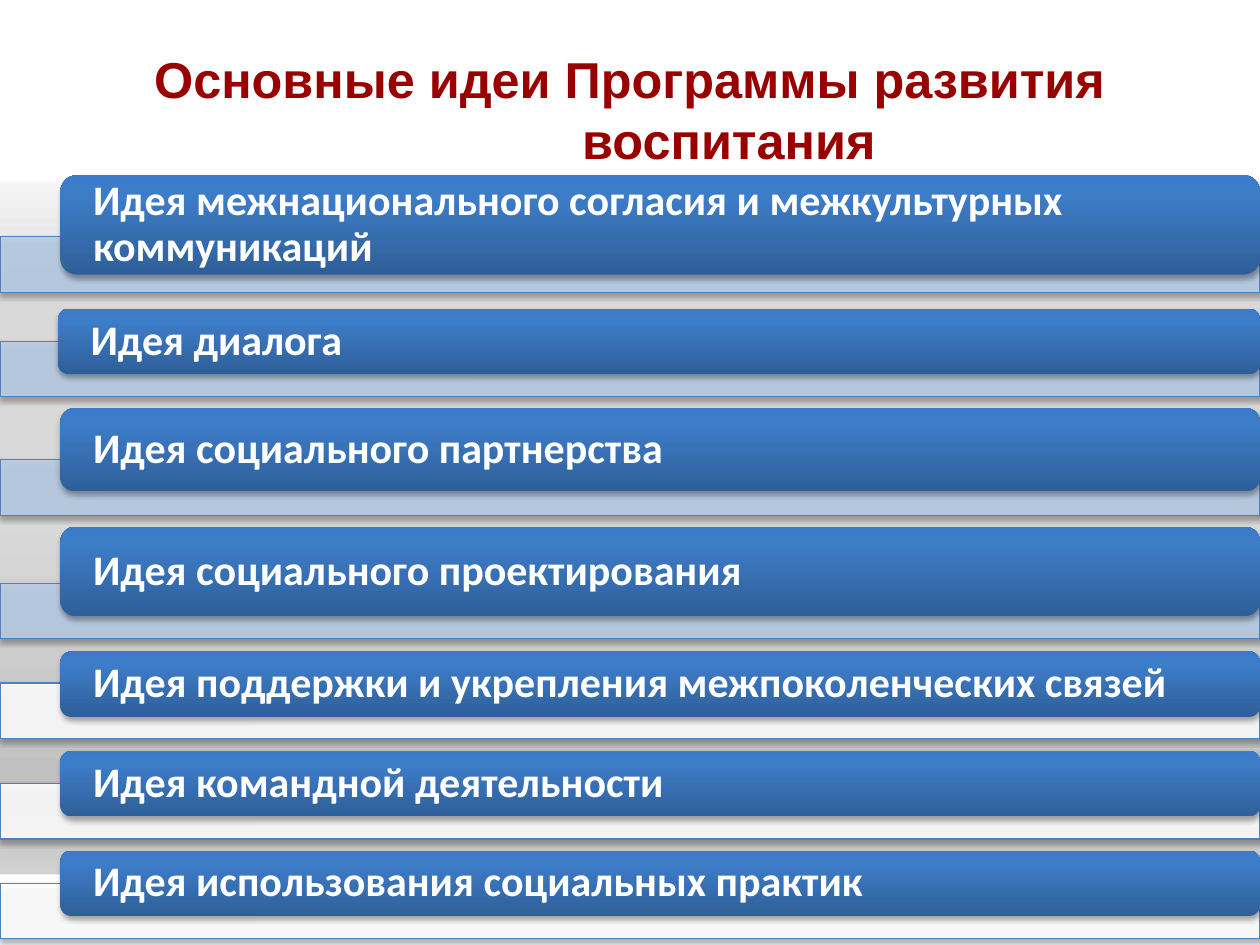
from lxml.etree import SubElement
from pptx import Presentation
from pptx.dml.color import RGBColor
from pptx.enum.shapes import MSO_SHAPE as Shape
from pptx.enum.text import MSO_ANCHOR as Anchor, PP_ALIGN as Align
from pptx.oxml.ns import qn
from pptx.util import Inches, Pt

WIDTH, HEIGHT = 10, 7.5
WHITE = RGBColor(0xFF, 0xFF, 0xFF)
DARK_RED = RGBColor(0x99, 0x00, 0x00)
PALE_BLUE = RGBColor(0xB9, 0xCD, 0xE5)
LINE_BLUE = RGBColor(0x4F, 0x81, 0xBD)
DEEP_BLUE = RGBColor(0x2F, 0x5F, 0x99)
MID_BLUE = RGBColor(0x3D, 0x7C, 0xC7)
BRIGHT_BLUE = RGBColor(0x3A, 0x7C, 0xCB)
LIGHT_GREY = RGBColor(0xD9, 0xD9, 0xD9)
MID_GREY = RGBColor(0xBF, 0xBF, 0xBF)
PALE_GREY = RGBColor(0xE6, 0xE6, 0xE6)

PAGE_STOPS = [(0, WHITE), (15, WHITE), (32, LIGHT_GREY),
              (54, LIGHT_GREY), (85, MID_GREY), (100, PALE_GREY)]
PILL_STOPS = [(0, DEEP_BLUE), (80, MID_BLUE), (100, BRIGHT_BLUE)]

PLATE_HEIGHT = 0.44
PILL_LEFT = 0.48
PILL_INSET = 0.26
CORNER_INSET = 0.05  # text inset of a rounded corner, as a share of height

# Idea, pill left, pill top, pill height, plate top, plate colour
IDEAS = [
    ("Идея межнационального согласия и межкультурных коммуникаций",
     PILL_LEFT, 1.39, 0.79, 1.88, PALE_BLUE),
    ("Идея диалога", 0.46, 2.45, 0.52, 2.71, PALE_BLUE),
    ("Идея социального партнерства", PILL_LEFT, 3.24, 0.66, 3.65, PALE_BLUE),
    ("Идея социального проектирования", PILL_LEFT, 4.18, 0.71, 4.63, PALE_BLUE),
    ("Идея поддержки и укрепления межпоколенческих связей",
     PILL_LEFT, 5.17, 0.52, 5.42, WHITE),
    ("Идея командной деятельности", PILL_LEFT, 5.96, 0.52, 6.22, WHITE),
    ("Идея использования социальных практик",
     PILL_LEFT, 6.75, 0.52, 7.01, WHITE),
]


def add_color(parent, color, alpha=None):
    node = SubElement(parent, qn("a:srgbClr"), val=str(color))
    if alpha is not None:
        SubElement(node, qn("a:alpha"), val=str(alpha * 1000))


def set_gradient(fill, owner, stops, angle):
    """Fill with any number of stops; the angle runs counter-clockwise."""
    fill.gradient()
    fill.gradient_angle = angle
    stop_list = next(owner.iter(qn("a:gsLst")))
    for old_stop in list(stop_list):
        stop_list.remove(old_stop)
    for position, color in stops:
        add_color(SubElement(stop_list, qn("a:gs"), pos=str(position * 1000)), color)


def add_box(page, kind, left, top, width, height):
    box = page.shapes.add_shape(
        kind, Inches(left), Inches(top), Inches(width), Inches(height))
    box.shadow.inherit = False
    box.line.fill.background()
    return box


def add_plain_box(page, left, top, width, height, color):
    box = add_box(page, Shape.RECTANGLE, left, top, width, height)
    box.fill.solid()
    box.fill.fore_color.rgb = color
    return box


def cast_shadow(box):
    effects = box.element.spPr.find(qn("a:effectLst"))
    shadow = SubElement(effects, qn("a:outerShdw"), blurRad=str(Pt(3.1)),
                        dist=str(Pt(1.8)), dir="5400000", rotWithShape="0")
    add_color(shadow, RGBColor(0, 0, 0), 35)


def write(box, text, font_name, size, color, align):
    frame = box.text_frame
    frame.word_wrap = True
    frame.vertical_anchor = Anchor.MIDDLE
    para = frame.paragraphs[0]
    para.text = text
    para.alignment = align
    font = para.font
    font.name, font.size, font.bold = font_name, Pt(size), True
    font.color.rgb = color
    return para


def add_title(page):
    box = add_plain_box(page, 0, 0.29, WIDTH, 1.15, WHITE)
    para = write(box, "Основные идеи Программы развития воспитания",
                 "Arial", 28.8, DARK_RED, Align.CENTER)
    # Hanging indent
    props = para._p.get_or_add_pPr()
    props.set("marL", str(Inches(1.57)))
    props.set("indent", str(-Inches(1.57)))
    # Letter outline
    letters = para.runs[0].font._element
    outline = SubElement(letters, qn("a:ln"), w=str(Pt(0.75)))
    add_color(SubElement(outline, qn("a:solidFill")), DARK_RED)
    letters.insert(0, outline)


def add_plate(page, top, color):
    plate = add_plain_box(page, 0, top, WIDTH, PLATE_HEIGHT, color)
    fill_color = plate.element.spPr.find(qn("a:solidFill"))[0]
    SubElement(fill_color, qn("a:alpha"), val="90000")
    plate.line.color.rgb = LINE_BLUE
    plate.line.width = Pt(0.75)
    cast_shadow(plate)


def add_pill(page, text, left, top, height):
    pill = add_box(page, Shape.ROUNDED_RECTANGLE, left, top, WIDTH - left, height)
    set_gradient(pill.fill, pill.element.spPr, PILL_STOPS, 90)
    cast_shadow(pill)
    frame = pill.text_frame
    frame.margin_left = frame.margin_right = Inches(PILL_INSET - CORNER_INSET * height)
    frame.margin_top = frame.margin_bottom = 0
    para = write(pill, text, "Calibri", 24, WHITE, Align.LEFT)
    para.line_spacing = 0.9


def main():
    deck = Presentation()
    deck.slide_width, deck.slide_height = Inches(WIDTH), Inches(HEIGHT)
    page = deck.slides.add_slide(deck.slide_layouts[6])

    # Background, bottom band and title
    set_gradient(page.background.fill, page.element, PAGE_STOPS, 270)
    add_plain_box(page, 0, 6.94, WIDTH, 0.58, WHITE)
    add_title(page)

    # List of ideas
    for text, left, top, height, plate_top, plate_color in IDEAS:
        add_plate(page, plate_top, plate_color)
        add_pill(page, text, left, top, height)

    deck.save("out.pptx")


if __name__ == "__main__":
    main()
